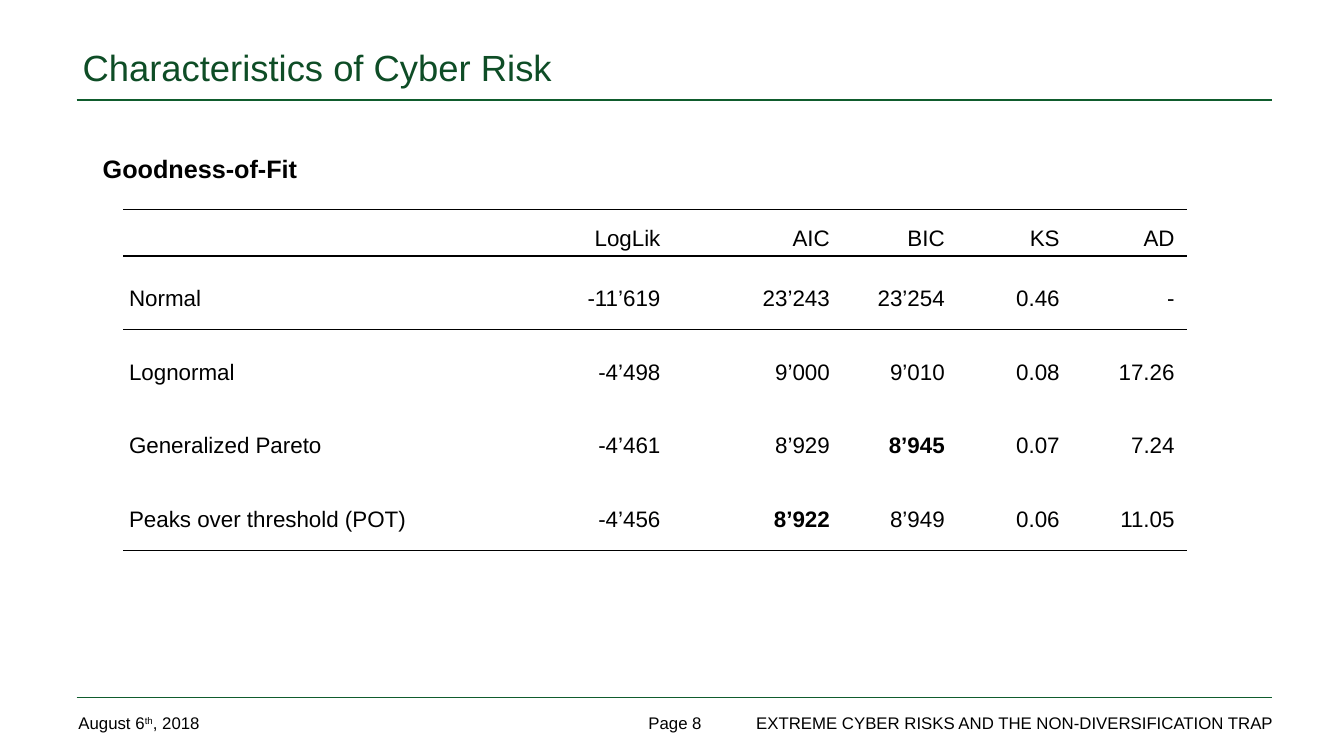
from lxml.etree import SubElement
from pptx import Presentation
from pptx.dml.color import RGBColor
from pptx.enum.shapes import MSO_CONNECTOR
from pptx.enum.text import MSO_ANCHOR, PP_ALIGN
from pptx.oxml.ns import qn
from pptx.util import Inches, Pt

GREEN = RGBColor(0x0F, 0x5C, 0x2D)
TITLE_GREEN = RGBColor(0x0E, 0x4D, 0x26)
BLACK = RGBColor(0, 0, 0)
FONT = "Arial"
NO_STYLE_NO_GRID = "{2D5ABB26-0587-4C30-8999-92F81FD0307C}"

TITLE = "Characteristics of Cyber Risk"
HEADING = "Goodness-of-Fit"
DATE = ("August 6", "th", ", 2018")
PAGE = "Page 8"
FOOTER = "EXTREME CYBER RISKS AND THE NON-DIVERSIFICATION TRAP"

FIT_ROWS = [
    ("", "LogLik", "AIC", "BIC", "KS", "AD"),
    ("Normal", "-11’619", "23’243", "23’254", "0.46", "-"),
    ("Lognormal", "-4’498", "9’000", "9’010", "0.08", "17.26"),
    ("Generalized Pareto", "-4’461", "8’929", "8’945", "0.07", "7.24"),
    ("Peaks over threshold (POT)", "-4’456", "8’922", "8’949", "0.06", "11.05"),
]
BEST_VALUES = {"8’922", "8’945"}

# The fit rows stand between an open row above and a merged one below.
COLUMN_WIDTHS = [3.49, 1.96, 1.68, 1.14, 1.14, 1.14]
ROW_HEIGHTS = [1.14, 0.4] + [0.73] * 4 + [1]
TABLE_LEFT, TABLE_TOP = 1.22, 0.94
FIRST_FIT_ROW = 1
RULED_ROWS = {1: ("a:lnT", "a:lnB"), 2: ("a:lnT",), 5: ("a:lnB",), 6: ("a:lnT",)}

RULE_LEFT, RULE_RIGHT = 0.76, 12.62
RULE_TOPS = [0.99, 6.92]


def write(frame, text, size=12, color=BLACK, bold=False, align=PP_ALIGN.LEFT,
          anchor=MSO_ANCHOR.MIDDLE, spacing=None, superscript=None):
    """Fill a text frame; text is one string or a sequence of run texts."""
    frame.word_wrap = True
    frame.vertical_anchor = anchor
    paragraph = frame.paragraphs[0]
    paragraph.alignment = align
    paragraph.line_spacing = spacing
    for part in [text] if isinstance(text, str) else text:
        run = paragraph.add_run()
        run.text = part
        run.font.name = FONT
        run.font.size = Pt(size)
        run.font.bold = bold
        run.font.color.rgb = color
        if part == superscript:
            run._r.get_or_add_rPr().set("baseline", "30000")


def add_text(slide, box, text, inset=None, **text_format):
    frame = slide.shapes.add_textbox(*map(Inches, box)).text_frame
    if inset is not None:
        frame.margin_left = frame.margin_right = Inches(inset)
        frame.margin_top = frame.margin_bottom = Inches(inset)
    write(frame, text, **text_format)


def add_rule(slide, top):
    rule = slide.shapes.add_connector(
        MSO_CONNECTOR.STRAIGHT, Inches(RULE_LEFT), Inches(top),
        Inches(RULE_RIGHT), Inches(top))
    rule.line.color.rgb = GREEN
    rule.line.width = Pt(1.25)
    SubElement(rule._element.spPr, qn("a:effectLst"))


def add_border(cell, side):
    line = SubElement(cell._tc.get_or_add_tcPr(), qn(side), w=str(Pt(1)))
    fill = SubElement(line, qn("a:solidFill"))
    SubElement(fill, qn("a:srgbClr"), val=str(BLACK))


def add_fit_table(slide):
    shape = slide.shapes.add_table(
        len(ROW_HEIGHTS), len(COLUMN_WIDTHS), Inches(TABLE_LEFT), Inches(TABLE_TOP),
        Inches(sum(COLUMN_WIDTHS)), Inches(sum(ROW_HEIGHTS)))
    table = shape.table
    table.first_row = table.horz_banding = False
    table._tbl.tblPr.find(qn("a:tableStyleId")).text = NO_STYLE_NO_GRID
    for column, width in zip(table.columns, COLUMN_WIDTHS):
        column.width = Inches(width)
    for row, height in zip(table.rows, ROW_HEIGHTS):
        row.height = Inches(height)

    last_row, last_column = len(ROW_HEIGHTS) - 1, len(COLUMN_WIDTHS) - 1
    table.cell(last_row, 0).merge(table.cell(last_row, last_column))
    for row_index, row in enumerate(table.rows):
        for cell in row.cells:
            for side in RULED_ROWS.get(row_index, ()):
                add_border(cell, side)
            cell.fill.background()

    for row_index, values in enumerate(FIT_ROWS, FIRST_FIT_ROW):
        for column_index, value in enumerate(values):
            if not value:
                continue
            cell = table.cell(row_index, column_index)
            cell.margin_left, cell.margin_right = Inches(0.06), Inches(0.12)
            cell.margin_top = cell.margin_bottom = Inches(0.03)
            cell.vertical_anchor = MSO_ANCHOR.MIDDLE
            write(cell.text_frame, value, size=16, bold=value in BEST_VALUES,
                  align=PP_ALIGN.RIGHT if column_index else PP_ALIGN.LEFT,
                  anchor=None, spacing=1.5)


def main():
    presentation = Presentation()
    presentation.slide_width = Inches(13.33)
    presentation.slide_height = Inches(7.5)
    slide = presentation.slides.add_slide(presentation.slide_layouts[6])

    add_text(slide, (7.35, 7.07, 5.28, 0.2), FOOTER, inset=0, align=PP_ALIGN.RIGHT)
    add_text(slide, (5.05, 7.02, 3.29, 0.3), PAGE, align=PP_ALIGN.CENTER)
    add_text(slide, (0.68, 7.02, 2.84, 0.3), DATE, superscript="th")
    for top in RULE_TOPS:
        add_rule(slide, top)
    add_text(slide, (0.72, 0.4, 9.05, 0.52), TITLE, size=26, color=TITLE_GREEN,
             anchor=MSO_ANCHOR.TOP)
    add_text(slide, (0.92, 1.47, 11.68, 5.11), HEADING, size=18, bold=True,
             anchor=MSO_ANCHOR.TOP)
    add_fit_table(slide)
    presentation.save("out.pptx")


if __name__ == "__main__":
    main()
